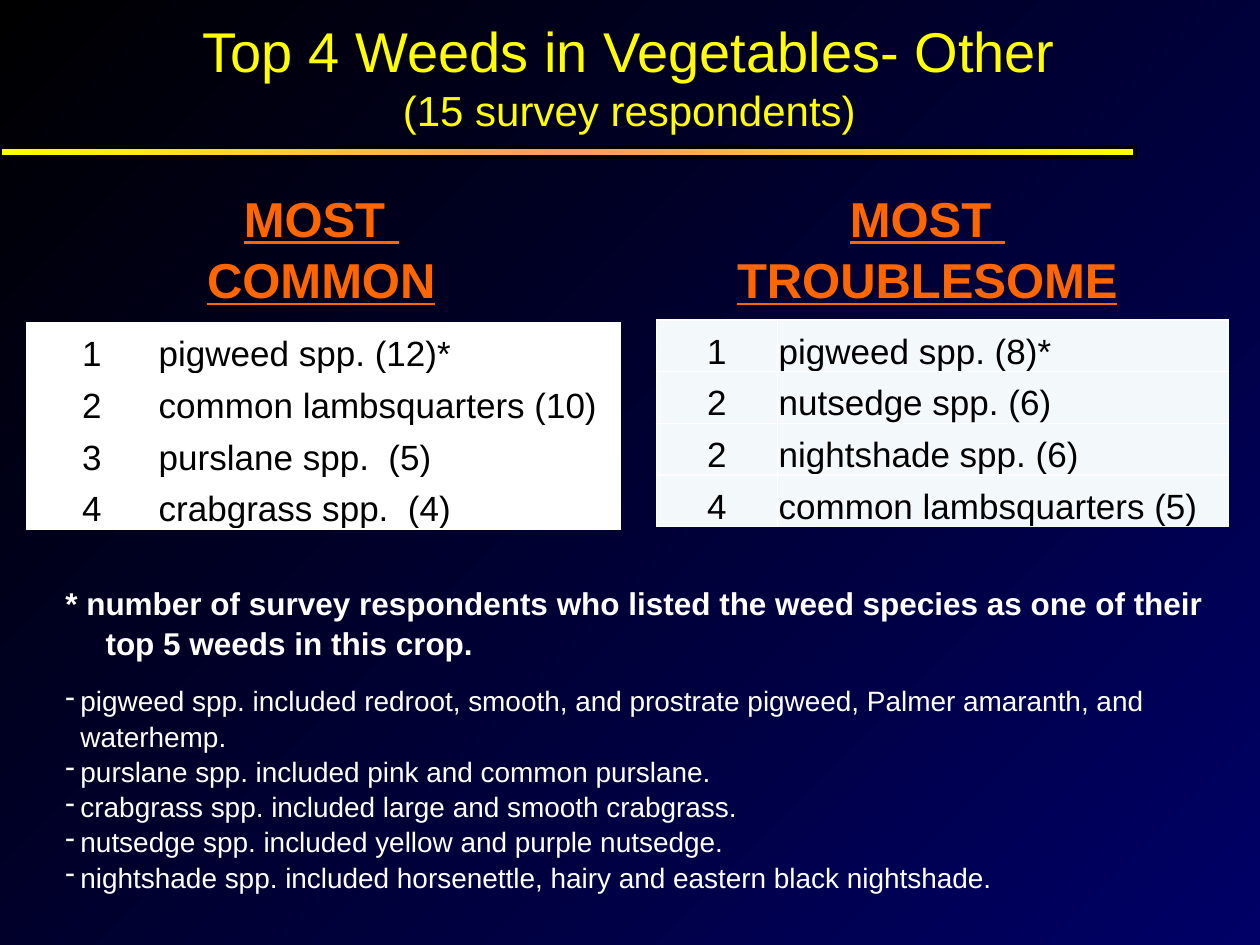
from copy import deepcopy

from lxml import etree
from pptx import Presentation
from pptx.dml.color import RGBColor
from pptx.enum.shapes import MSO_SHAPE
from pptx.enum.text import MSO_ANCHOR, PP_ALIGN
from pptx.oxml.ns import qn
from pptx.util import Inches, Pt

CENTER, LEFT = PP_ALIGN.CENTER, PP_ALIGN.LEFT
MIDDLE, TOP, BOTTOM = MSO_ANCHOR.MIDDLE, MSO_ANCHOR.TOP, MSO_ANCHOR.BOTTOM
RECTANGLE = MSO_SHAPE.RECTANGLE
FONT = "Arial"
YELLOW, ORANGE, WHITE, BLACK = "FFFF00", "FF6600", "FFFFFF", "000000"
ROW_HEIGHT = 0.41

COMMON_WEEDS = [
    ("1", "pigweed spp. (12)*"),
    ("2", "common lambsquarters (10)"),
    ("3", "purslane spp.  (5)"),
    ("4", "crabgrass spp.  (4)"),
]
TROUBLESOME_WEEDS = [
    ("1", "pigweed spp. (8)*"),
    ("2", "nutsedge spp. (6)"),
    ("2", "nightshade spp. (6)"),
    ("4", "common lambsquarters (5)"),
]
FOOTNOTE = ("* number of survey respondents who listed the weed species "
            "as one of their  top 5 weeds in this crop.")
SPECIES_NOTES = [
    "pigweed spp. included redroot, smooth, and prostrate pigweed, "
    "Palmer amaranth, and waterhemp.",
    "purslane spp. included pink and common purslane.",
    "crabgrass spp. included large and smooth crabgrass.",
    "nutsedge spp. included yellow and purple nutsedge.",
    "nightshade spp. included horsenettle, hairy and eastern black nightshade.",
]


def rgb(value):
    return RGBColor.from_string(value)


def set_gradient(fill, element, colors, angle=0):
    """Spread the colours evenly; the angle runs counter-clockwise."""
    fill.gradient()
    fill.gradient_angle = angle
    stop_list = next(element.iter(qn("a:gsLst")))
    while len(stop_list) < len(colors):
        stop_list.append(deepcopy(stop_list[0]))
    for index, (stop, color) in enumerate(zip(fill.gradient_stops, colors)):
        stop.position = index / (len(colors) - 1)
        stop.color.rgb = rgb(color)


def write(frame, text, size, color, bold=False, underline=False, align=LEFT,
          indent=0, bullet=None, before=0, spacing=None):
    """Fill the first paragraph if it is empty, otherwise add one."""
    paragraph = frame.paragraphs[0]
    if paragraph.runs:
        paragraph = frame.add_paragraph()
    paragraph.alignment = align
    paragraph.space_before = Pt(before)
    if spacing:
        paragraph.line_spacing = spacing
    properties = paragraph._p.get_or_add_pPr()
    if indent:
        properties.set("marL", str(Inches(indent)))
        properties.set("indent", str(-Inches(indent)))
    if bullet:
        etree.SubElement(properties, qn("a:buChar")).set("char", bullet)
    run = paragraph.add_run()
    run.text = text
    font = run.font
    font.name, font.size, font.bold = FONT, Pt(size), bold
    font.underline = underline
    font.color.rgb = rgb(color)


def add_text_box(slide, left, top, width, height, anchor=TOP, wrap=True):
    box = slide.shapes.add_textbox(Inches(left), Inches(top),
                                   Inches(width), Inches(height))
    box.text_frame.word_wrap = wrap
    box.text_frame.vertical_anchor = anchor
    return box.text_frame


def add_title(slide):
    frame = add_text_box(slide, 0.33, 0, 9.33, 1.2, anchor=MIDDLE)
    write(frame, "Top 4 Weeds in Vegetables- Other", 32, YELLOW, align=CENTER)
    write(frame, "(15 survey respondents)", 24, YELLOW, align=CENTER)


def add_divider(slide):
    bar = slide.shapes.add_shape(RECTANGLE, Inches(0), Inches(1.17),
                                 Inches(9.01), Inches(0.08))
    bar.shadow.inherit = False
    set_gradient(bar.fill, bar._element.spPr, [YELLOW, "FF9966", YELLOW])
    bar.line.color.rgb = rgb(BLACK)
    bar.line.width = Pt(2.25)


def add_heading(slide, left, width, lines, wrap=True):
    frame = add_text_box(slide, left, 1.42, width, 1.04, wrap=wrap)
    for line in lines:
        write(frame, line, 28, ORANGE, bold=True, underline=True,
              align=CENTER, spacing=1.05)


def set_borders(cell, color, width):
    properties = cell._tc.get_or_add_tcPr()
    for position, side in enumerate(("lnL", "lnR", "lnT", "lnB")):
        line = etree.Element(qn(f"a:{side}"), w=str(Pt(width)))
        fill = etree.SubElement(line, qn("a:solidFill"))
        etree.SubElement(fill, qn("a:srgbClr"), val=color)
        properties.insert(position, line)


def add_weed_table(slide, left, top, widths, weeds, background):
    table = slide.shapes.add_table(
        len(weeds), len(widths), Inches(left), Inches(top),
        Inches(sum(widths)), Inches(ROW_HEIGHT * len(weeds))).table
    for column, width in zip(table.columns, widths):
        column.width = Inches(width)
    for row, weed in zip(table.rows, weeds):
        row.height = Inches(ROW_HEIGHT)
        for cell, text, align in zip(row.cells, weed, (CENTER, LEFT)):
            cell.margin_left = cell.margin_right = Inches(0.01)
            cell.margin_top, cell.margin_bottom = Inches(0.01), 0
            cell.vertical_anchor = BOTTOM
            cell.fill.solid()
            cell.fill.fore_color.rgb = rgb(background)
            set_borders(cell, WHITE, 1)
            write(cell.text_frame, text, 20, BLACK, align=align)


def add_notes_text(slide):
    frame = add_text_box(slide, 0.42, 4.57, 9.25, 2.49)
    write(frame, FOOTNOTE, 18, WHITE, bold=True, indent=0.25, spacing=1.05)
    for index, note in enumerate(SPECIES_NOTES):
        write(frame, note, 16, WHITE, indent=0.12, bullet="-",
              before=0 if index else 12, spacing=1.05)


def main():
    presentation = Presentation()
    presentation.slide_width = Inches(10)
    presentation.slide_height = Inches(7.5)
    slide = presentation.slides.add_slide(presentation.slide_layouts[6])
    set_gradient(slide.background.fill, slide.element,
                 [BLACK, "000066"], angle=315)
    add_divider(slide)
    add_heading(slide, 1.35, 2.4, ["MOST ", "COMMON"])
    add_heading(slide, 5.73, 3.26, ["MOST ", "TROUBLESOME"], wrap=False)
    add_weed_table(slide, 0.21, 2.56, (1.04, 3.67), COMMON_WEEDS, WHITE)
    add_weed_table(slide, 5.21, 2.54, (0.96, 3.58), TROUBLESOME_WEEDS, "F3F9FA")
    add_title(slide)
    add_notes_text(slide)
    presentation.save("out.pptx")


if __name__ == "__main__":
    main()
